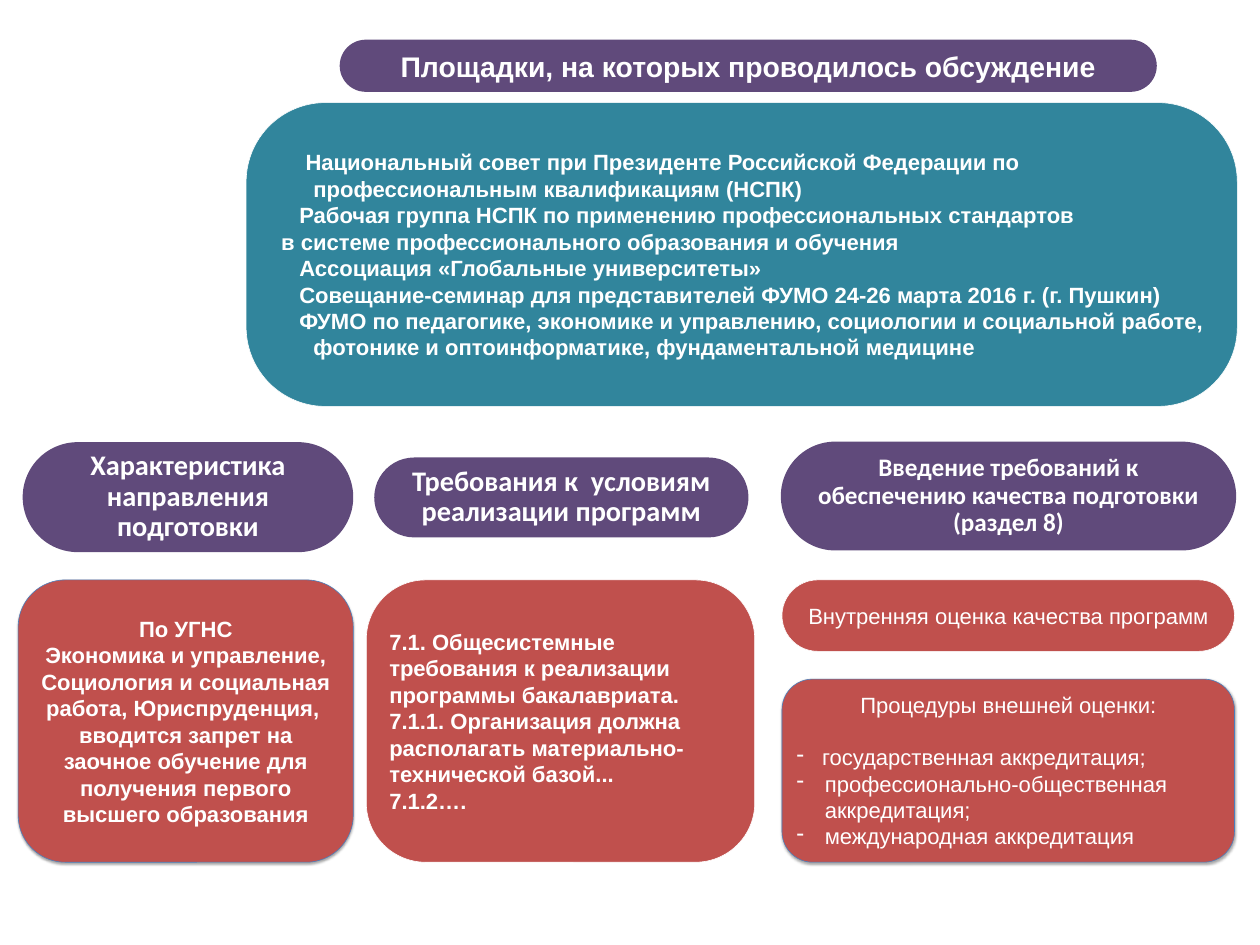
from dataclasses import dataclass

import lxml.etree
import pptx
import pptx.dml.color
import pptx.enum.shapes
import pptx.enum.text
import pptx.oxml.ns
import pptx.util

Inches, Pt = pptx.util.Inches, pptx.util.Pt
qn = pptx.oxml.ns.qn
Align = pptx.enum.text.PP_ALIGN

PURPLE, RED, TEAL = "604A7B", "C0504D", "31859C"
WHITE, BLUE, BLACK = "FFFFFF", "4B7EBC", "000000"
LEFT, MID, FULL = Align.LEFT, Align.CENTER, Align.JUSTIFY


@dataclass
class Para:
    text: str
    left: float = 0       # left margin, inches
    first: float = 0      # first line relative to the margin, inches
    bullet: str = ""
    before: float = 0     # space before, points


@dataclass
class Box:
    left: float
    top: float
    width: float
    height: float
    fill: str
    paras: list[Para]
    size: float = 28
    font: str = "Arial"
    bold: bool = True
    align: Align = MID
    round: float = 0.5
    line: str = ""
    shade: bool = False
    pitch: float = 1.0


def color(code: str) -> pptx.dml.color.RGBColor:
    return pptx.dml.color.RGBColor.from_string(code)


def add_shade(shape) -> None:
    """Soft shadow straight below the shape."""
    effects = shape._element.spPr.find(qn("a:effectLst"))
    outer = lxml.etree.SubElement(
        effects, qn("a:outerShdw"), blurRad=str(Pt(3.1)), dist=str(Pt(1.8)),
        dir="5400000", rotWithShape="0")
    tint = lxml.etree.SubElement(outer, qn("a:srgbClr"), val=BLACK)
    lxml.etree.SubElement(tint, qn("a:alpha"), val="35000")


def set_para(par, item: Para, box: Box) -> None:
    par.text = item.text
    par.alignment = FULL if item.bullet else box.align
    props = par._p.get_or_add_pPr()
    props.set("marL", str(Inches(item.left)))
    props.set("indent", str(Inches(item.first)))
    if box.pitch != 1:
        par.line_spacing = box.pitch
    if item.before:
        par.space_before = Pt(item.before)
    if item.bullet:
        lxml.etree.SubElement(props, qn("a:buChar"), char=item.bullet)
    for run in par.runs:
        run.font.name = box.font
        run.font.size = Pt(box.size)
        run.font.bold = box.bold
        run.font.color.rgb = color(WHITE)


def draw_box(slide, box: Box) -> None:
    shape = slide.shapes.add_shape(
        pptx.enum.shapes.MSO_SHAPE.ROUNDED_RECTANGLE,
        Inches(box.left), Inches(box.top), Inches(box.width), Inches(box.height))
    shape.adjustments[0] = box.round
    shape.fill.solid()
    shape.fill.fore_color.rgb = color(box.fill)
    if box.line:
        shape.line.color.rgb = color(box.line)
        shape.line.width = Pt(0.75)
    else:
        shape.line.fill.background()
    shape.shadow.inherit = False
    if box.shade:
        add_shade(shape)
    frame = shape.text_frame
    frame.word_wrap = True
    frame.vertical_anchor = pptx.enum.text.MSO_ANCHOR.MIDDLE
    for index, item in enumerate(box.paras):
        par = frame.add_paragraph() if index else frame.paragraphs[0]
        set_para(par, item, box)


def head(left: float, top: float, width: float, height: float,
         *lines: str, size: float = 36) -> Box:
    """Purple heading of a column."""
    return Box(left, top, width, height, PURPLE, [Para(t) for t in lines],
               size, "Calibri", pitch=0.9)


def venue(text: str, start: float = 0.43) -> Para:
    """Hanging paragraph whose first line begins at start."""
    return Para(text, 0.68, start - 0.68)


def point(text: str, left: float = 0.5, before: float = 0) -> Para:
    return Para(text, left, -left, "-", before)


ROW, TALL = 10.23, 4.98

BOXES = [
    # Quality assurance column
    head(13.77, 7.79, 8.03, 1.92,
         "Введение требований к обеспечению качества подготовки",
         "(раздел 8)", size=32),
    Box(13.79, ROW, 7.98, 1.26, RED,
        [Para("Внутренняя оценка качества программ")], bold=False, line=WHITE),
    Box(13.79, 11.98, 7.98, 3.23, RED, [
        Para("Процедуры внешней оценки:"),
        point("государственная аккредитация;", 0.45, 32),
        point("профессионально-общественная аккредитация;"),
        point("международная аккредитация"),
    ], bold=False, round=0.167, line=BLUE, shade=True),
    # Programme conditions column
    head(6.6, 8.07, 6.6, 1.41, "Требования к  условиям реализации программ"),
    Box(6.46, ROW, 6.85, TALL, RED, [
        Para("7.1. Общесистемные требования к реализации программы бакалавриата."),
        Para("7.1.1. Организация должна располагать "
             "материально-технической базой..."),
        Para("7.1.2…."),
    ], align=LEFT, round=0.21, line=WHITE),
    # Title and venues
    Box(5.99, 0.7, 14.41, 0.92, PURPLE,
        [Para("Площадки, на которых проводилось обсуждение")], 36),
    Box(4.34, 1.81, 17.48, 5.36, TEAL, [
        venue("Национальный совет при Президенте Российской Федерации по "
              "профессиональным квалификациям (НСПК)", 0.54),
        venue("Рабочая группа НСПК по применению профессиональных стандартов"),
        venue("в системе профессионального образования и обучения", 0.11),
        venue("Ассоциация «Глобальные университеты»"),
        venue("Совещание-семинар для представителей ФУМО "
              "24-26 марта 2016 г. (г. Пушкин)"),
        venue("ФУМО по педагогике, экономике и управлению, социологии и "
              "социальной работе, фотонике и оптоинформатике, "
              "фундаментальной медицине"),
    ], align=LEFT, round=0.261, line=WHITE),
    # Field of study column
    head(0.4, 7.8, 5.83, 1.94, "Характеристика направления подготовки"),
    Box(0.32, ROW, 5.91, TALL, RED, [
        Para("По УГНС", first=-0.22),
        Para("Экономика и управление, Социология и социальная работа, "
             "Юриспруденция, "),
        Para("вводится запрет на заочное обучение для получения первого "
             "высшего образования"),
    ], round=0.167, line=BLUE, shade=True),
]


def main() -> None:
    deck = pptx.Presentation()
    deck.slide_width, deck.slide_height = Inches(22.22), Inches(16.67)
    slide = deck.slides.add_slide(deck.slide_layouts[6])
    for box in BOXES:
        draw_box(slide, box)
    deck.save("out.pptx")


if __name__ == "__main__":
    main()
